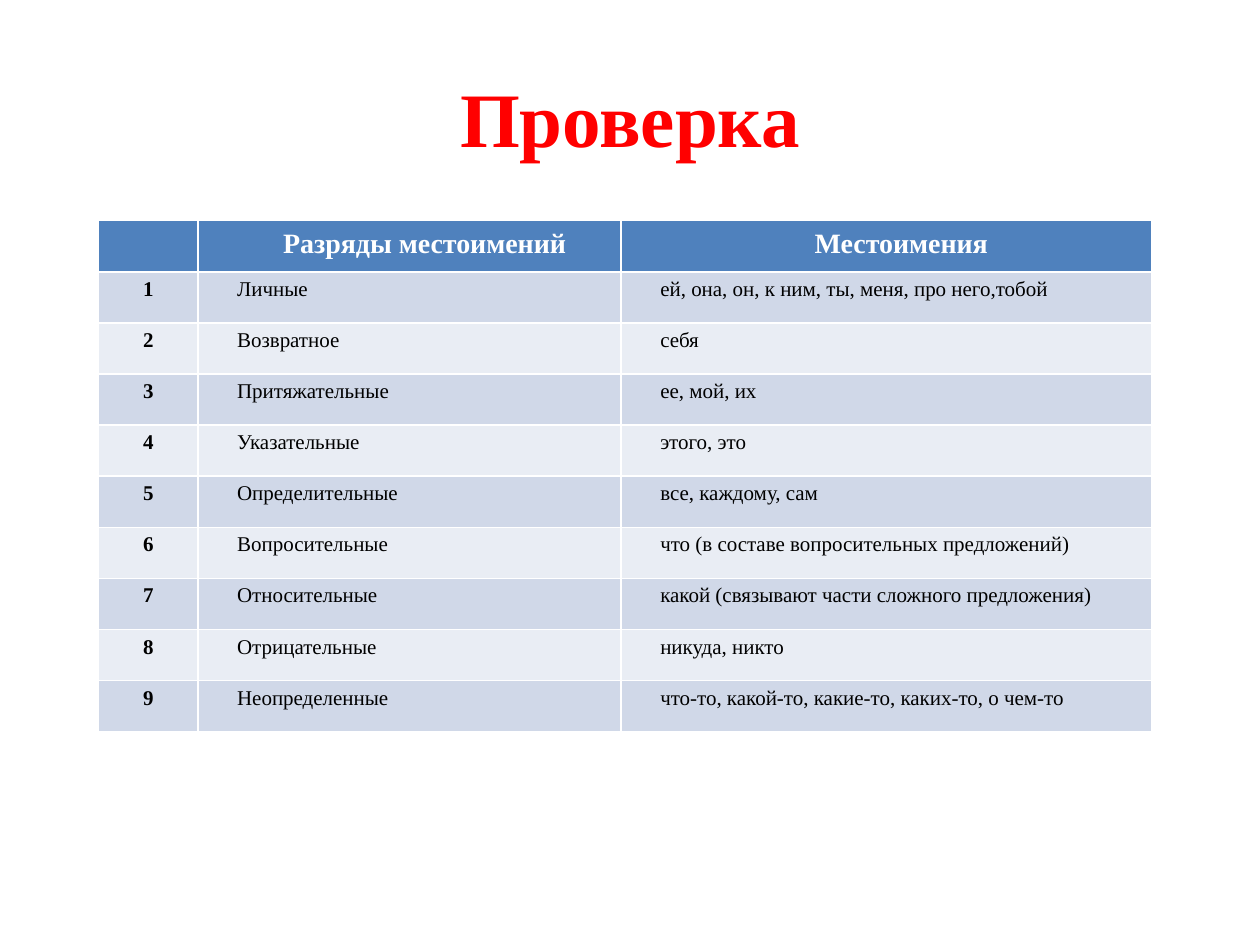
"""Build a slide with a table of pronoun classes and their examples."""
import pptx
import pptx.dml.color
import pptx.enum.text
import pptx.util

Cm, Pt = pptx.util.Cm, pptx.util.Pt
RGB = pptx.dml.color.RGBColor.from_string
CENTER = pptx.enum.text.PP_ALIGN.CENTER
LEFT = pptx.enum.text.PP_ALIGN.LEFT
FONT = "Times New Roman"
COLORS = {
    "title": "FF0000",
    "header": "4F81BD",
    "header_text": "FFFFFF",
    "odd": "D0D8E8",
    "even": "E9EDF4",
    "text": "000000",
}
HEADER = ("", "Разряды местоимений", "Местоимения")
PRONOUNS = [
    ("Личные", "ей, она, он, к ним, ты, меня, про него,тобой"),
    ("Возвратное", "себя"),
    ("Притяжательные", "ее, мой, их"),
    ("Указательные", "этого, это"),
    ("Определительные", "все, каждому, сам"),
    ("Вопросительные", "что (в составе вопросительных предложений)"),
    ("Относительные", "какой (связывают части сложного предложения)"),
    ("Отрицательные", "никуда, никто"),
    ("Неопределенные", "что-то, какой-то, какие-то, каких-то, о чем-то"),
]


def add_run(p, text, size, color, bold):
    r = p.add_run()
    r.text = text
    r.font.name = FONT
    r.font.size = Pt(size)
    r.font.bold = bold
    r.font.color.rgb = RGB(COLORS[color])


prs = pptx.Presentation()
prs.slide_width, prs.slide_height = Cm(25.4), Cm(19.05)
s = prs.slides.add_slide(prs.slide_layouts[5])

title = s.shapes.title
title.left, title.top, title.width, title.height = Cm(1.27), Cm(0.76), Cm(22.86), Cm(3.18)
title.text_frame.vertical_anchor = pptx.enum.text.MSO_ANCHOR.MIDDLE
p = title.text_frame.paragraphs[0]
p.alignment = CENTER
add_run(p, "Проверка", 44, "title", True)

rows = [HEADER] + [(str(n), *row) for n, row in enumerate(PRONOUNS, 1)]
widths = (2.0, 8.53, 10.69)
row_height = Cm(1.03)
table = s.shapes.add_table(
    len(rows), len(widths), Cm(1.99), Cm(4.45), Cm(sum(widths)), row_height * len(rows)
).table
for column, width in zip(table.columns, widths):
    column.width = Cm(width)

for i, row in enumerate(rows):
    table.rows[i].height = row_height
    is_header = i == 0
    fill = "header" if is_header else "odd" if i % 2 else "even"
    for j, text in enumerate(row):
        cell = table.cell(i, j)
        cell.fill.solid()
        cell.fill.fore_color.rgb = RGB(COLORS[fill])
        if not text:
            continue
        cell.margin_left = cell.margin_right = Cm(0.18)
        cell.margin_top = cell.margin_bottom = 0
        p = cell.text_frame.paragraphs[0]
        p.alignment = CENTER if is_header or j == 0 else LEFT
        p.line_spacing = 1.25
        left, indent = (0.97, -0.97) if j == 0 else (0, 0.61)
        pPr = p._p.get_or_add_pPr()
        pPr.set("marL", str(Cm(left)))
        pPr.set("indent", str(Cm(indent)))
        size, color = (16, "header_text") if is_header else (12, "text")
        add_run(p, text, size, color, is_header or j == 0)

prs.save("out.pptx")
